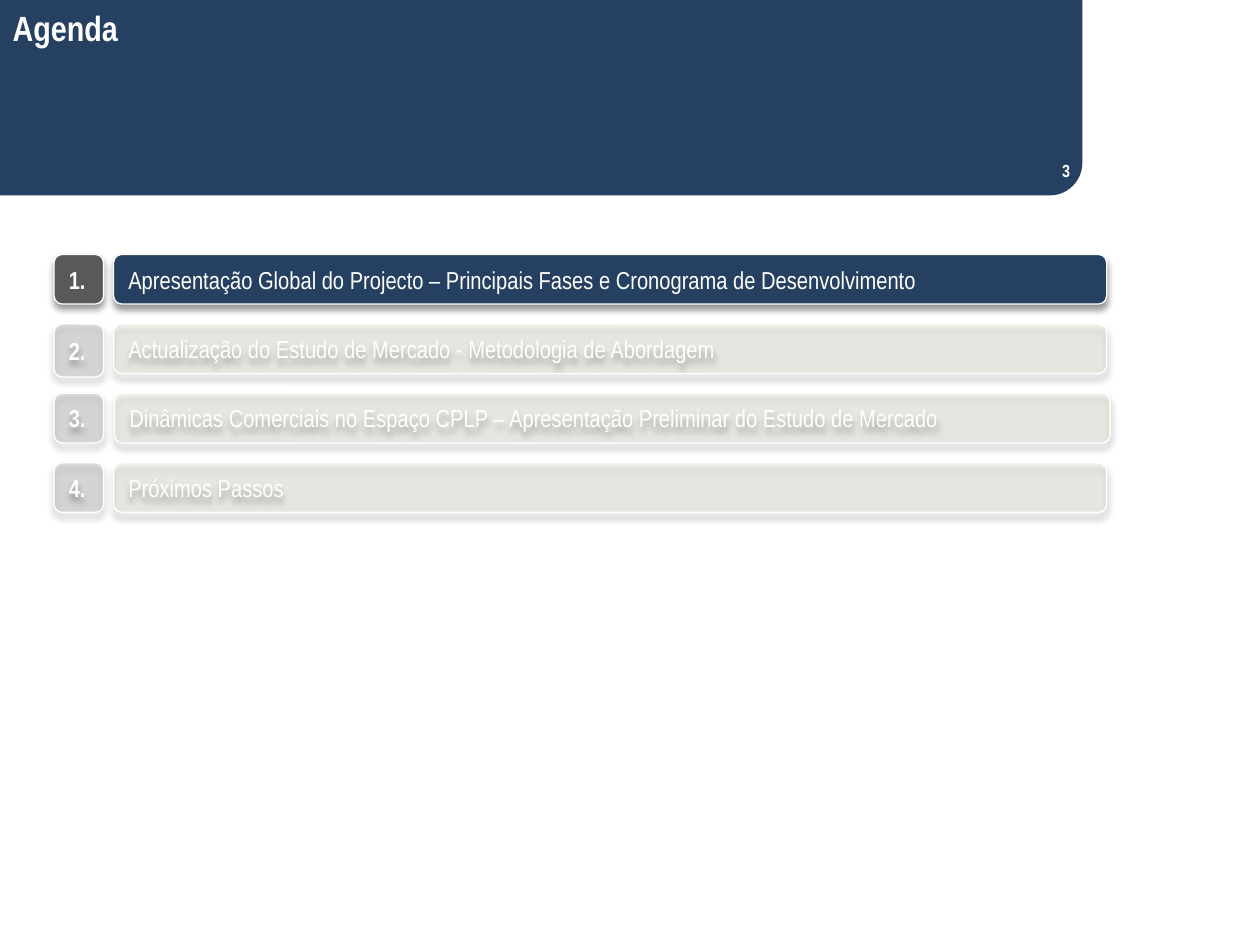
import dataclasses

import lxml.etree
import pptx
import pptx.dml.color
import pptx.enum.shapes
import pptx.enum.text
import pptx.oxml.ns
import pptx.util

Cm = pptx.util.Cm
RGBColor = pptx.dml.color.RGBColor
Shape = pptx.enum.shapes.MSO_SHAPE
Align = pptx.enum.text.PP_ALIGN
Anchor = pptx.enum.text.MSO_ANCHOR
qn = pptx.oxml.ns.qn

NAVY = RGBColor(0x25, 0x40, 0x61)
GREY = RGBColor(0x59, 0x59, 0x59)
SAND = RGBColor(0xC4, 0xBD, 0x97)
WHITE = RGBColor(0xFF, 0xFF, 0xFF)

FONT = "Arial Narrow"
FADED = 17  # opacity of inactive items, per cent
FIRST_TOP, ROW_PITCH, ROW_HEIGHT = 5.13, 1.4, 1.0
TAG_LEFT, TAG_WIDTH = 1.09, 1.0


@dataclasses.dataclass
class AgendaItem:
    text: str
    active: bool = False
    bar_left: float = 2.29
    bar_width: float = 20.02
    tag_height: float = ROW_HEIGHT


AGENDA = [
    AgendaItem("Apresentação Global do Projecto – Principais Fases e "
               "Cronograma de Desenvolvimento", active=True),
    AgendaItem("Actualização do Estudo de Mercado - Metodologia de Abordagem",
               tag_height=1.07),
    AgendaItem("Dinâmicas Comerciais no Espaço CPLP – Apresentação Preliminar "
               "do Estudo de Mercado", bar_left=2.31, bar_width=20.07),
    AgendaItem("Próximos Passos"),
]


def write_text(box, text: str, size: float, bold: bool = False,
               align=Align.LEFT, anchor=Anchor.MIDDLE) -> None:
    frame = box.text_frame
    frame_format = {"word_wrap": True, "vertical_anchor": anchor,
                    "auto_size": pptx.enum.text.MSO_AUTO_SIZE.NONE}
    for name, value in frame_format.items():
        setattr(frame, name, value)
    para = frame.paragraphs[0]
    para.alignment = align
    span = para.add_run()
    span.text = text
    span_format = {"name": FONT, "size": pptx.util.Pt(size), "bold": bold}
    for name, value in span_format.items():
        setattr(span.font, name, value)
    span.font.color.rgb = WHITE


def add_block(page, kind, left: float, top: float, width: float,
              height: float, color: RGBColor):
    block = page.shapes.add_shape(kind, Cm(left), Cm(top), Cm(width), Cm(height))
    block.shadow.inherit = False
    block.fill.solid()
    block.fill.fore_color.rgb = color
    block.line.fill.background()
    return block


def set_opacity(color_element, percent: int) -> None:
    lxml.etree.SubElement(color_element, qn("a:alpha"), val=str(percent * 1000))


def add_shadow(block) -> None:
    effects = block.element.spPr.find(qn("a:effectLst"))
    shadow = lxml.etree.SubElement(
        effects, qn("a:outerShdw"), blurRad=str(pptx.util.Pt(4)),
        dist=str(pptx.util.Pt(3)), dir="5400000", rotWithShape="0")
    color = lxml.etree.SubElement(shadow, qn("a:srgbClr"), val="000000")
    set_opacity(color, 40)


def add_label(page, left: float, top: float, width: float, height: float,
              color: RGBColor, text: str, active: bool, bold: bool) -> None:
    label = add_block(page, Shape.ROUNDED_RECTANGLE,
                      left, top, width, height, color)
    label.line.color.rgb = WHITE
    label.line.width = pptx.util.Pt(0.75)
    if not active:
        fill = label.element.spPr.find(qn("a:solidFill"))
        set_opacity(fill.find(qn("a:srgbClr")), FADED)
    add_shadow(label)
    write_text(label, text, 14, bold)


def add_agenda_row(page, number: int, item: AgendaItem) -> None:
    top = FIRST_TOP + (number - 1) * ROW_PITCH
    add_label(page, item.bar_left, top, item.bar_width, ROW_HEIGHT,
              NAVY if item.active else SAND, item.text, item.active, bold=False)
    add_label(page, TAG_LEFT, top, TAG_WIDTH, item.tag_height,
              GREY, f"{number}.", item.active, bold=True)


def main() -> None:
    deck = pptx.Presentation()
    deck.slide_width, deck.slide_height = Cm(25.4), Cm(19.05)
    page = deck.slides.add_slide(deck.slide_layouts[5])

    # Header band: the second block squares off its top left corner
    add_block(page, Shape.ROUND_2_DIAG_RECTANGLE, 0, 0, 21.82, 3.94, NAVY)
    cover = add_block(page, Shape.RECTANGLE, 0, 0, 19.41, 2.29, NAVY)

    # Title, brought in front of the header band
    title = page.shapes.title
    place = {"left": Cm(0), "top": Cm(0), "width": Cm(11.2), "height": Cm(1.12)}
    for name, value in place.items():
        setattr(title, name, value)
    write_text(title, "Agenda", 20, bold=True, anchor=Anchor.TOP)
    cover.element.addnext(title.element)

    # Page number
    number_box = page.shapes.add_textbox(Cm(15.9), Cm(2.92), Cm(5.92), Cm(1.02))
    write_text(number_box, "3", 10, bold=True, align=Align.RIGHT)

    # Agenda
    for number, item in enumerate(AGENDA, start=1):
        add_agenda_row(page, number, item)

    deck.save("out.pptx")


if __name__ == "__main__":
    main()
